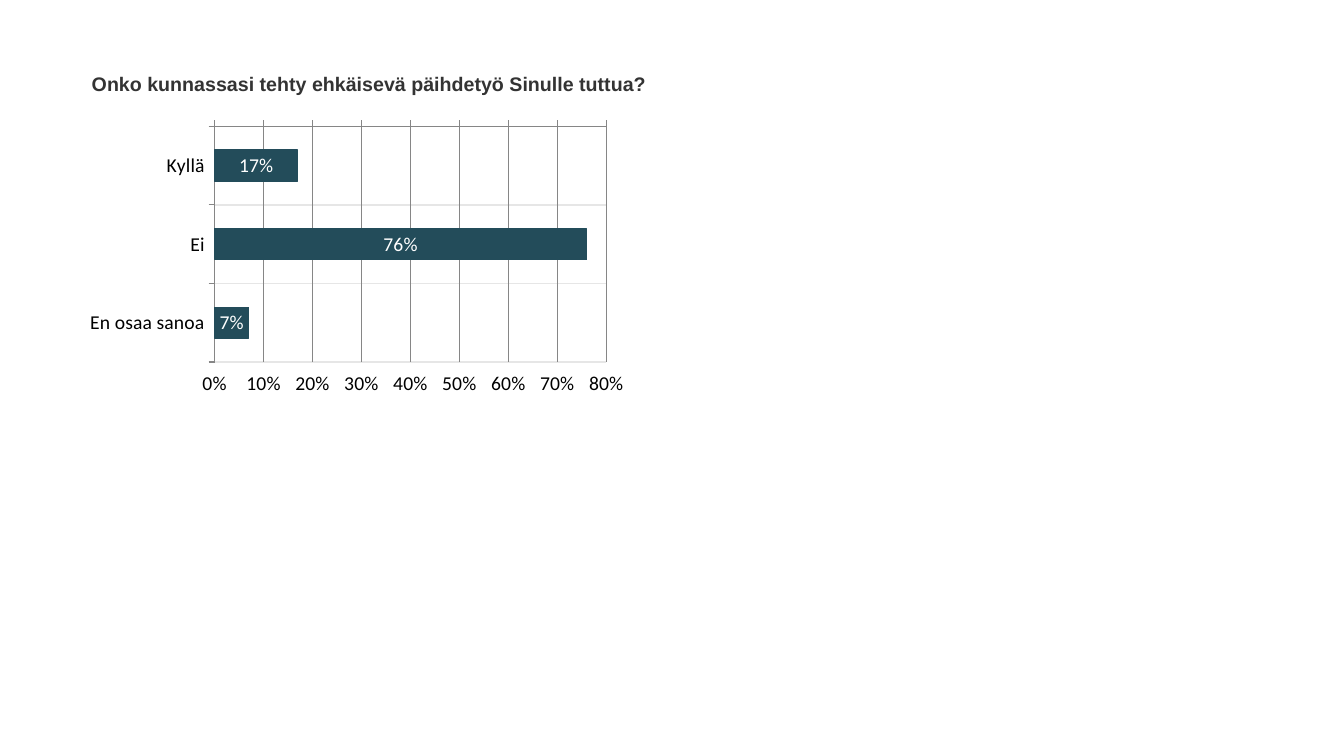
from lxml import etree
from pptx import Presentation
from pptx.chart.data import CategoryChartData
from pptx.dml.color import RGBColor
from pptx.enum.chart import XL_CHART_TYPE, XL_LABEL_POSITION, XL_TICK_LABEL_POSITION, XL_TICK_MARK
from pptx.oxml.ns import qn
from pptx.util import Inches, Pt

BAR = XL_CHART_TYPE.BAR_CLUSTERED
CENTER = XL_LABEL_POSITION.CENTER
LOW, HIGH = XL_TICK_LABEL_POSITION.LOW, XL_TICK_LABEL_POSITION.HIGH
OUTSIDE, NO_TICK = XL_TICK_MARK.OUTSIDE, XL_TICK_MARK.NONE
COLORS = {"heading": "333333", "bar": "234C5A", "text": "000000", "label": "FFFFFF",
          "axis": "868686", "grid": "E6E6E6"}
ANSWERS = {"Kyllä": 0.17, "Ei": 0.76, "En osaa sanoa": 0.07}
PLOT_LAYOUT = {"layoutTarget": "inner", "xMode": "edge", "yMode": "edge",
               "x": 0.243, "y": 0.023, "w": 0.705, "h": 0.838}


def color(name):
    return RGBColor.from_string(COLORS[name])


def style_font(font, name, size, color_name, bold=False):
    font.name, font.size, font.bold = name, Pt(size), bold
    font.color.rgb = color(color_name)


def style_line(line, color_name, width=0.75):
    line.color.rgb = color(color_name)
    line.width = Pt(width)


def add_heading(page, text):
    box = page.shapes.add_textbox(Inches(0.91), Inches(0.71), Inches(7.31), Inches(0.24))
    frame = box.text_frame
    frame.word_wrap = True
    frame.margin_left = frame.margin_right = frame.margin_top = frame.margin_bottom = 0
    span = frame.paragraphs[0].add_run()
    span.text = text
    style_font(span.font, "Arial", 14, "heading", True)


def style_axis(axis, label_position, grid_color, grid_width):
    axis.tick_label_position = label_position
    axis.major_tick_mark, axis.minor_tick_mark = OUTSIDE, NO_TICK
    axis.has_major_gridlines = True
    style_line(axis.major_gridlines.format.line, grid_color, grid_width)
    style_line(axis.format.line, "axis")


def place_plot(chart):
    plot_area = chart.plots[0]._element.getparent()
    for old in plot_area.findall(qn("c:layout")):
        plot_area.remove(old)
    layout = etree.Element(qn("c:layout"))
    manual = etree.SubElement(layout, qn("c:manualLayout"))
    for name, value in PLOT_LAYOUT.items():
        etree.SubElement(manual, qn(f"c:{name}")).set("val", str(value))
    plot_area.insert(0, layout)


def add_answer_chart(page, answers):
    data = CategoryChartData(number_format="0%")
    data.categories = list(answers)
    data.add_series("Series 1", list(answers.values()))
    chart = page.shapes.add_chart(BAR, Inches(0.79), Inches(1.19), Inches(5.51),
                                  Inches(2.79), data).chart
    chart.has_title = chart.has_legend = False
    style_font(chart.font, "Calibri", 14, "text")
    place_plot(chart)

    style_axis(chart.category_axis, LOW, "grid", 1)
    chart.category_axis.reverse_order = True
    scale = chart.value_axis
    style_axis(scale, HIGH, "axis", 0.75)
    scale.minimum_scale, scale.maximum_scale, scale.major_unit = 0, 0.8, 0.1
    scale.tick_labels.number_format = "0%"
    scale.tick_labels.number_format_is_linked = False

    plot = chart.plots[0]
    plot.gap_width, plot.vary_by_categories = 150, False
    bars = plot.series[0].format
    bars.fill.solid()
    bars.fill.fore_color.rgb = color("bar")
    style_line(bars.line, "bar")
    plot.has_data_labels = True
    labels = plot.data_labels
    labels.show_value, labels.position = True, CENTER
    labels.number_format, labels.number_format_is_linked = "0%", False
    style_font(labels.font, "Calibri", 14, "label")


def main():
    """Build the survey slide and save it."""
    deck = Presentation()
    deck.slide_width, deck.slide_height = Inches(13.33), Inches(7.5)
    page = deck.slides.add_slide(deck.slide_layouts[6])
    add_heading(page, "Onko kunnassasi tehty ehkäisevä päihdetyö Sinulle tuttua?")
    add_answer_chart(page, ANSWERS)
    deck.save("out.pptx")


if __name__ == "__main__":
    main()
